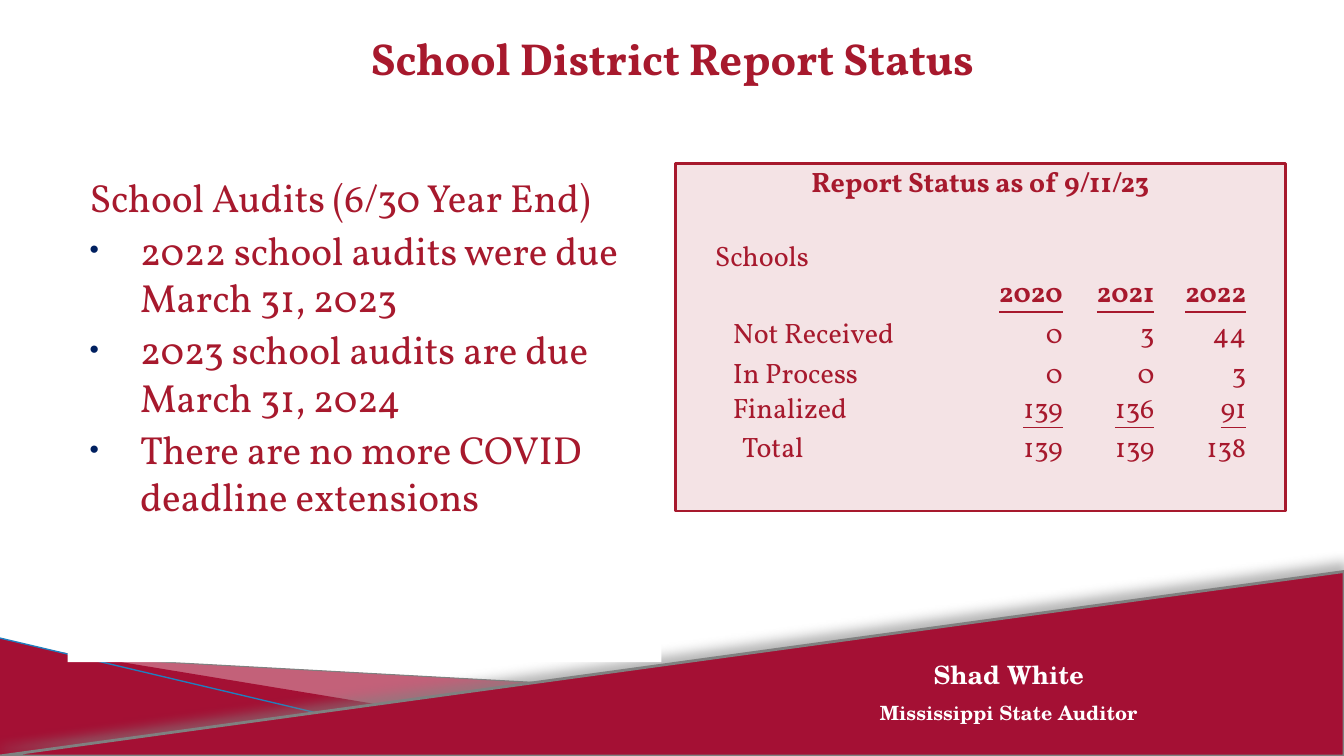
from lxml import etree
from pptx import Presentation
from pptx.dml.color import RGBColor
from pptx.enum.shapes import MSO_CONNECTOR as Connector, MSO_SHAPE as Shape
from pptx.enum.text import MSO_ANCHOR as Anchor, PP_ALIGN as Align
from pptx.oxml import parse_xml
from pptx.oxml.ns import nsdecls, qn
from pptx.util import Inches, Pt

CRIMSON = RGBColor(0xA4, 0x10, 0x34)
RED = RGBColor(0xA7, 0x19, 0x2D)
GREY = RGBColor(0x80, 0x80, 0x80)
BLUE = RGBColor(0x1F, 0x7F, 0xBF)
NAVY = RGBColor(0x00, 0x20, 0x60)
WHITE = RGBColor(0xFF, 0xFF, 0xFF)


class StatusPage:
    """The slide being built, with its fonts and colours."""

    body_font = "Vollkorn"
    footer_font = "TeX Gyre Schola"

    def __init__(self, deck):
        self.page = deck.slides.add_slide(deck.slide_layouts[6])
        self.shapes = self.page.shapes

    def paint(self, shape, fill, alpha=None, line=None, width=1):
        shape.shadow.inherit = False
        shape.fill.solid()
        shape.fill.fore_color.rgb = fill
        if alpha is not None:
            color = shape._element.spPr.find(qn("a:solidFill"))[0]
            etree.SubElement(color, qn("a:alpha"), val=str(alpha * 1000))
        if line is None:
            shape.line.fill.background()
        else:
            shape.line.color.rgb = line
            shape.line.width = Pt(width)
        return shape

    def shape(self, kind, box, fill, **style):
        added = self.shapes.add_shape(kind, *map(Inches, box))
        return self.paint(added, fill, **style)

    def polygon(self, points, fill, **style):
        corners = [(Inches(x), Inches(y)) for x, y in points]
        builder = self.shapes.build_freeform(*corners[0])
        builder.add_line_segments(corners[1:], close=True)
        return self.paint(builder.convert_to_shape(), fill, **style)

    def line(self, start, end, color, width):
        added = self.shapes.add_connector(
            Connector.STRAIGHT, *map(Inches, start + end))
        added.line.color.rgb = color
        added.line.width = Pt(width)
        etree.SubElement(added._element.spPr, qn("a:effectLst"))

    def soft_shadow(self, shape, color, alpha, blur, distance, angle):
        effects = shape._element.spPr.find(qn("a:effectLst"))
        effects.append(parse_xml(
            f'<a:outerShdw {nsdecls("a")} blurRad="{Pt(blur)}" '
            f'dist="{Pt(distance)}" dir="{angle * 60000}" rotWithShape="0">'
            f'<a:srgbClr val="{color}"><a:alpha val="{alpha * 1000}"/>'
            f'</a:srgbClr></a:outerShdw>'))

    def text_frame(self, box, anchor=Anchor.TOP):
        frame = self.shapes.add_textbox(*map(Inches, box)).text_frame
        frame.word_wrap = True
        frame.vertical_anchor = anchor
        return frame

    def add_span(self, para, text, size, color=RED, font=None,
                 bold=False, underline=False, align=Align.LEFT):
        para.alignment = align
        span = para.add_run()
        span.text = text
        span.font.name = font or self.body_font
        span.font.size = Pt(size)
        span.font.color.rgb = color
        span.font.bold = bold
        span.font.underline = underline

    def indent(self, para, left, first=0, bullet=None):
        props = para._p.get_or_add_pPr()
        props.set("marL", str(Inches(left)))
        props.set("indent", str(Inches(first)))
        if bullet:
            color = etree.SubElement(props, qn("a:buClr"))
            etree.SubElement(color, qn("a:srgbClr"), val=str(NAVY))
            etree.SubElement(props, qn("a:buSzPct"), val="68000")
            etree.SubElement(props, qn("a:buFont"), typeface="Arial")
            etree.SubElement(props, qn("a:buChar"), char=bullet)

    def table(self, box, widths, heights):
        frame = self.shapes.add_table(
            len(heights), len(widths), *map(Inches, box))
        grid = frame.table
        grid.first_row = grid.horz_banding = False
        for column, width in zip(grid.columns, widths):
            column.width = Inches(width)
        for row, height in zip(grid.rows, heights):
            row.height = Inches(height)
        for cell in grid.iter_cells():
            cell.fill.background()
            cell.vertical_anchor = Anchor.BOTTOM
            cell.margin_left = cell.margin_right = Inches(0.01)
            cell.margin_top, cell.margin_bottom = Inches(0.01), 0
            # Small end mark so that empty rows keep their height
            etree.SubElement(cell.text_frame.paragraphs[0]._p,
                             qn("a:endParaRPr"), sz="800")
        return grid

    def fill_cell(self, cell, text, left=0.01, **style):
        cell.margin_left = Inches(left)
        self.add_span(cell.text_frame.paragraphs[0], text, 20, **style)


def main():
    deck = Presentation()
    deck.slide_width, deck.slide_height = Inches(13.33), Inches(7.5)
    slide = StatusPage(deck)

    # Footer artwork
    slide.polygon([(0, 6.48), (8.21, 6.93), (6.21, 7.41)], CRIMSON,
                  alpha=66, line=GREY, width=0.75)
    slide.polygon([(0, 6.37), (5.69, 7.31), (4.5, 7.47)], CRIMSON)
    slide.shape(Shape.RIGHT_TRIANGLE, (0, 6.33, 4.95, 1.17), CRIMSON)
    slide.line((0, 6.33), (4.95, 7.5), BLUE, 0.95)
    wedge = slide.shape(Shape.ISOSCELES_TRIANGLE, (0, 5.67, 13.33, 1.83),
                        CRIMSON, line=GREY, width=2)
    wedge.adjustments[0] = 1
    slide.soft_shadow(wedge, GREY, 60, blur=8, distance=6, angle=270)

    # Footer name
    footer = slide.text_frame((7.67, 6.49, 4.67, 0.77))
    slide.add_span(footer.paragraphs[0], "Shad White", 18, WHITE,
                   slide.footer_font, bold=True, align=Align.CENTER)
    office = footer.add_paragraph()
    office.space_before = Pt(8)
    slide.add_span(office, "Mississippi State Auditor", 14, WHITE,
                   slide.footer_font, bold=True, align=Align.CENTER)

    # Audit deadlines
    panel = slide.shape(Shape.RECTANGLE, (0.67, 1.62, 5.89, 4.95), WHITE)
    deadlines = panel.text_frame
    deadlines.word_wrap = True
    deadlines.vertical_anchor = Anchor.TOP
    deadlines.margin_top = Inches(0.1)
    heading = deadlines.paragraphs[0]
    slide.indent(heading, 0.12)
    slide.add_span(heading, "School Audits (6/30 Year End)", 28)
    for text in ("2022 school audits were due March 31, 2023",
                 "2023 school audits are due March 31, 2024",
                 "There are no more COVID deadline extensions"):
        para = deadlines.add_paragraph()
        slide.indent(para, 0.62, -0.5, "•")
        para.space_before = Pt(4)
        slide.add_span(para, text, 28)

    # Report status table
    grid = slide.table(
        (7.08, 1.62, 5.29, 3.61), (2.63, 0.84, 0.91, 0.91),
        (0.41, 0.34, 0.34, 0.41, 0.41, 0.33, 0.38, 0.41, 0.34, 0.19))
    grid.cell(0, 0).merge(grid.cell(0, 3))
    slide.fill_cell(grid.cell(0, 0), "Report Status as of 9/11/23",
                    bold=True, align=Align.CENTER)
    slide.fill_cell(grid.cell(2, 0), "Schools")
    status_rows = (
        # label, left inset, yearly values, bold, underlined
        ("", 0.01, ("2020", "2021", "2022"), True, True),
        ("Not Received", 0.19, ("0", "3", "44"), False, False),
        ("In Process", 0.19, ("0", "0", "3"), False, False),
        ("Finalized", 0.19, ("139", "136", "91"), False, True),
        ("Total", 0.28, ("139", "139", "138"), False, False),
    )
    for row, (label, inset, values, bold, underline) in enumerate(
            status_rows, start=3):
        if label:
            slide.fill_cell(grid.cell(row, 0), label, inset)
        for column, value in enumerate(values, start=1):
            slide.fill_cell(grid.cell(row, column), value, bold=bold,
                            underline=underline, align=Align.RIGHT)

    # Title and table frame
    title = slide.text_frame((0.67, 0.3, 12, 0.55), Anchor.MIDDLE)
    slide.add_span(title.paragraphs[0], "School District Report Status", 32,
                   bold=True, align=Align.CENTER)
    slide.shape(Shape.RECTANGLE, (6.7, 1.62, 6.05, 3.45), RED,
                alpha=12, line=RED, width=2)

    deck.save("out.pptx")


if __name__ == "__main__":
    main()
